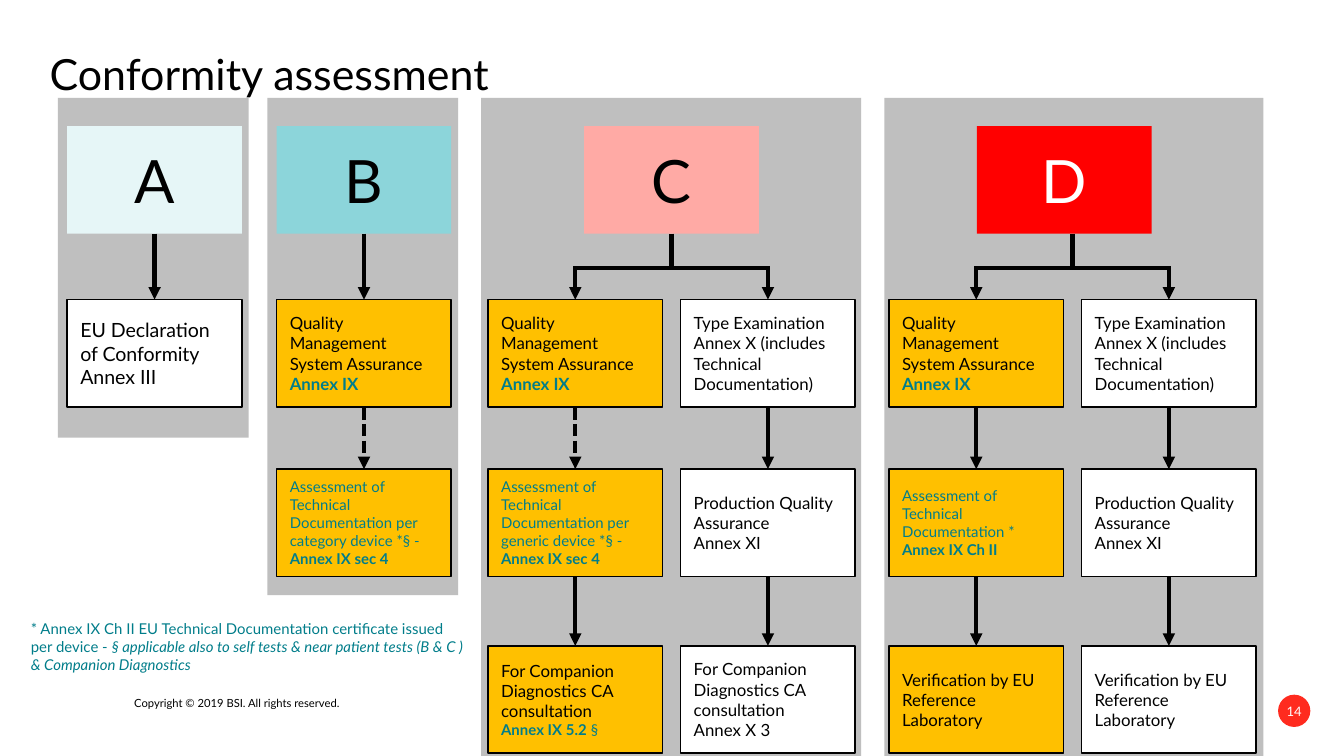
"""Builds the conformity assessment slide with one route per device class."""
from lxml.etree import SubElement
from pptx import Presentation
from pptx.dml.color import RGBColor
from pptx.enum.dml import MSO_LINE
from pptx.enum.shapes import MSO_CONNECTOR, MSO_SHAPE
from pptx.enum.text import MSO_ANCHOR, PP_ALIGN
from pptx.oxml.ns import qn
from pptx.util import Pt

BLACK = RGBColor(0x00, 0x00, 0x00)
WHITE = RGBColor(0xFF, 0xFF, 0xFF)
GREY = RGBColor(0xBF, 0xBF, 0xBF)
AMBER = RGBColor(0xFF, 0xC0, 0x00)
TEAL = RGBColor(0x00, 0x7D, 0x8A)
BADGE_RED = RGBColor(0xFF, 0x2B, 0x1F)
CLASS_A = RGBColor(0xE6, 0xF6, 0xF7)
CLASS_B = RGBColor(0x8C, 0xD5, 0xDA)
CLASS_C = RGBColor(0xFF, 0xAA, 0xA5)
CLASS_D = RGBColor(0xFF, 0x00, 0x00)

BOX_W, BOX_H = 93.6, 57.6
PANEL_TOP, HEADER_TOP, BUS_Y = 52.5, 67.6, 143.6
ROW_TOPS = [160.5, 251.3, 346]
LINE_W = 2.25

prs = Presentation()
prs.slide_width, prs.slide_height = Pt(720), Pt(405)
slide = prs.slides.add_slide(prs.slide_layouts[6])


def put(text, left, top, width, height, fill=None, border=False, kind=MSO_SHAPE.RECTANGLE,
        size=9, color=BLACK, align=PP_ALIGN.LEFT, inset=None, spacing=None):
    """Text is a list of paragraphs, each a list of (words, font overrides)."""
    area = [Pt(v) for v in (left, top, width, height)]
    if fill is None:
        item = slide.shapes.add_textbox(*area)
    else:
        item = slide.shapes.add_shape(kind, *area)
        item.shadow.inherit = False
        item.fill.solid()
        item.fill.fore_color.rgb = fill
        if border:
            item.line.color.rgb = BLACK
            item.line.width = Pt(0.85)
        else:
            item.line.fill.background()
    frame = item.text_frame
    frame.word_wrap = True
    frame.vertical_anchor = MSO_ANCHOR.TOP if fill is None else MSO_ANCHOR.MIDDLE
    if inset is not None:
        frame.margin_left = frame.margin_right = Pt(inset)
        frame.margin_top = frame.margin_bottom = Pt(inset)
    for index, runs in enumerate(text):
        paragraph = frame.add_paragraph() if index else frame.paragraphs[0]
        paragraph.alignment = align
        paragraph.line_spacing = spacing
        for words, changes in runs:
            for number, line in enumerate(words.split("\n")):
                if number:
                    paragraph.add_line_break()
                if line:
                    run = paragraph.add_run()
                    run.text = line
                    run.font.name = "Lato"
                    run.font.size = Pt(changes.get("size", size))
                    run.font.color.rgb = changes.get("color", color)
                    run.font.bold = changes.get("bold")
                    run.font.italic = changes.get("italic")
    return item


def link(start, end, source=None, target=None, arrow=True, dashed=False):
    line = slide.shapes.add_connector(MSO_CONNECTOR.STRAIGHT, *[Pt(v) for v in (*start, *end)])
    line.line.color.rgb = BLACK
    line.line.width = Pt(LINE_W)
    if dashed:
        line.line.dash_style = MSO_LINE.SQUARE_DOT
    if arrow:
        SubElement(line.line._get_or_add_ln(), qn("a:tailEnd"), type="triangle")
    SubElement(line._element.spPr, qn("a:effectLst"))
    if source is not None:
        line.begin_connect(source, 2)
    if target is not None:
        line.end_connect(target, 0)


ANNEX = {"color": TEAL, "bold": True}
QUALITY = [[("Quality Management System Assurance ", {}), ("Annex IX", ANNEX)]]
TYPE_EXAM = [[("Type Examination Annex X (includes Technical Documentation)", {})]]
PRODUCTION = [[("Production Quality Assurance", {})], [("Annex XI", {})]]
VERIFICATION = [[("Verification by EU Reference Laboratory", {})]]
DECLARATION = [[("EU Declaration of Conformity Annex III", {"size": 10.5})]]
COMPANION_IX = [[("For Companion Diagnostics CA consultation\n", {}),
                 ("Annex IX 5.2", {**ANNEX, "size": 8}), (" §", {"color": TEAL, "size": 8})]]
COMPANION_X = [[("For Companion Diagnostics CA consultation\nAnnex X 3", {})]]
ASSESS_B, ASSESS_C, ASSESS_D = [
    [[(f"Assessment of Technical Documentation {scope} ", {"color": TEAL, "size": 8}),
      (annex, {**ANNEX, "size": 8})]]
    for scope, annex in [("per category device *§ -", "Annex IX sec 4"),
                         ("per generic device *§ -", "Annex IX sec 4"),
                         ("*", "Annex IX Ch II")]]

# letter, fill, font colour, header left, panel (left, width, height), routes (left, fill, dashed, steps)
classes = [
    ("A", CLASS_A, BLACK, 36, (31, 102.2, 182), [(36, WHITE, False, [DECLARATION])]),
    ("B", CLASS_B, BLACK, 148.2, (143.3, 102.2, 266.4),
     [(148.2, AMBER, True, [QUALITY, ASSESS_B])]),
    ("C", CLASS_C, BLACK, 313, (257.8, 203.5, 363),
     [(261.4, AMBER, True, [QUALITY, ASSESS_C, COMPANION_IX]),
      (364.6, WHITE, False, [TYPE_EXAM, PRODUCTION, COMPANION_X])]),
    ("D", CLASS_D, WHITE, 523.4, (473.8, 203, 363),
     [(476.2, AMBER, False, [QUALITY, ASSESS_D, VERIFICATION]),
      (579.4, WHITE, False, [TYPE_EXAM, PRODUCTION, VERIFICATION])]),
]

put([[("Conformity assessment", {})]], 26.6, 28.8, 666.7, 25.2, size=23, inset=0, spacing=0.9)

for letter, tint, ink, header_left, (panel_left, panel_w, panel_h), routes in classes:
    put([], panel_left, PANEL_TOP, panel_w, panel_h, fill=GREY)
    header = put([[(letter, {})]], header_left, HEADER_TOP, BOX_W, BOX_H, fill=tint,
                 size=32, color=ink, align=PP_ALIGN.CENTER)
    header_mid, header_bottom = header_left + BOX_W / 2, HEADER_TOP + BOX_H
    mids = [route[0] + BOX_W / 2 for route in routes]
    branched = len(routes) > 1
    if branched:
        stem = sum(mids) / 2
        centred = abs(stem - header_mid) < 1
        link((stem, header_bottom), (stem, BUS_Y), header if centred else None, arrow=False)
        link((mids[0] - LINE_W / 2, BUS_Y), (mids[1] + LINE_W / 2, BUS_Y), arrow=False)
    for mid, (left, fill, dashed, steps) in zip(mids, routes):
        previous = None
        for row, (top, step) in enumerate(zip(ROW_TOPS, steps)):
            box = put(step, left, top, BOX_W, BOX_H, fill=fill, border=True)
            source = previous if row else None if branched else header
            link((mid, BUS_Y), (mid, top), source, box, dashed=dashed and row == 1)
            previous = box

put([[("* Annex IX Ch II EU Technical Documentation certificate issued per device - ", {}),
      ("§ applicable also to self tests & near patient tests (B & C ) & Companion Diagnostics",
       {"italic": True})]], 9.4, 328.3, 248.4, 36, size=8, color=TEAL)
put([[("Copyright © 2019 BSI. All rights reserved.", {})]], 64.8, 369.4, 243.4, 13, size=6)
put([[("14", {})]], 684.7, 372.2, 17.3, 17.3, fill=BADGE_RED, kind=MSO_SHAPE.OVAL,
    size=7, color=WHITE, align=PP_ALIGN.CENTER, inset=0)

prs.save("out.pptx")
